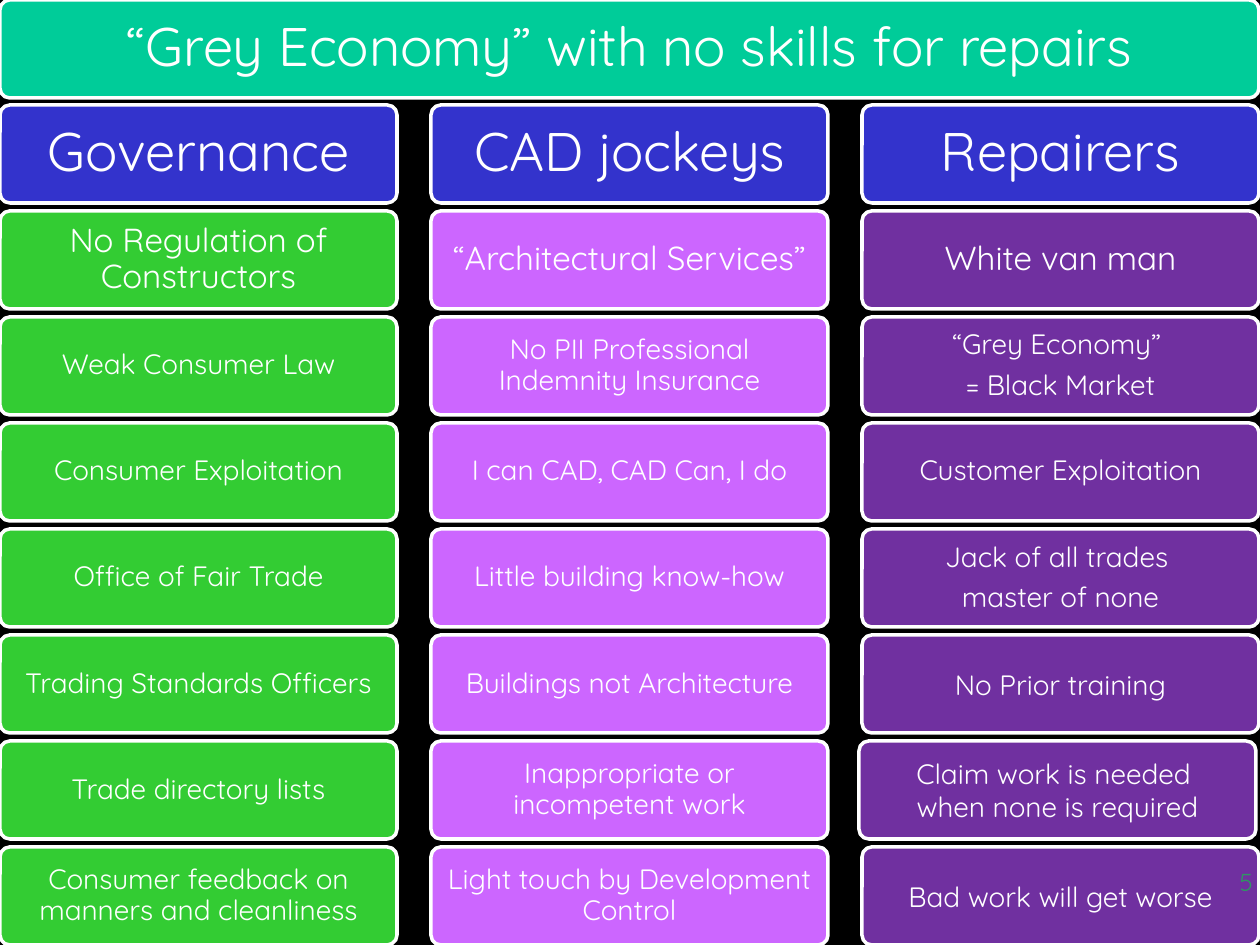
from pptx import Presentation
from pptx.dml.color import RGBColor
from pptx.enum.shapes import MSO_SHAPE
from pptx.enum.text import MSO_ANCHOR, PP_ALIGN
from pptx.util import Emu, Pt

FONT = "Quicksand"
WHITE = "FFFFFF"
PIXELS_PER_INCH = 126
CARD_HEIGHT, CARD_WIDTH, COLUMN_PITCH = 98, 397, 431
LAST_ROW, LAST_ROW_TOP = 8, 847

TITLE = "“Grey Economy” with no skills for repairs"
COLUMNS = [
    ("33CC33", [
        ["Governance"],
        ["No Regulation of Constructors"],
        ["Weak Consumer Law"],
        ["Consumer Exploitation"],
        ["Office of Fair Trade"],
        ["Trading Standards Officers"],
        ["Trade directory lists"],
        ["Consumer feedback on manners and cleanliness"],
    ]),
    ("CC66FF", [
        ["CAD jockeys"],
        ["“Architectural Services”"],
        ["No PII Professional Indemnity Insurance"],
        ["I can CAD, CAD Can, I do"],
        ["Little building know-how"],
        ["Buildings not Architecture"],
        ["Inappropriate or incompetent work"],
        ["Light touch by Development Control"],
    ]),
    ("7030A0", [
        ["Repairers"],
        ["White van man"],
        ["“Grey Economy” ", "= Black Market"],
        ["Customer Exploitation"],
        ["Jack of all trades ", "master of none"],
        ["No Prior training"],
        ["Claim work is needed ", "when none is required"],
        ["Bad work will get worse"],
    ]),
]
PLAIN_SPACING = {"No Prior training", "Claim work is needed ", "Bad work will get worse"}
NUDGES = {"Claim work is needed ": -3}


def px(length):
    """Turn whole pixels into EMU."""
    return Emu(round(length * 914400 / PIXELS_PER_INCH))


def color(value):
    """Turn a hex string into a colour."""
    return RGBColor.from_string(value)


def add_span(para, text, size, ink):
    """Add one run of text to a paragraph."""
    span = para.add_run()
    span.text = text
    span.font.name = FONT
    span.font.size = Pt(size)
    span.font.color.rgb = color(ink)


def set_margins(frame, margin):
    """Give a text frame the same margin on every side."""
    frame.margin_left = frame.margin_right = px(margin)
    frame.margin_top = frame.margin_bottom = px(margin)


def add_card(page, left, row, width, fill, lines, size, margin):
    """Draw a rounded card with centred text in a grid row."""
    top = LAST_ROW_TOP * row // LAST_ROW
    card = page.shapes.add_shape(
        MSO_SHAPE.ROUNDED_RECTANGLE, px(left), px(top), px(width), px(CARD_HEIGHT))
    card.adjustments[0] = 0.1
    card.shadow.inherit = False
    card.fill.solid()
    card.fill.fore_color.rgb = color(fill)
    card.line.color.rgb = color(WHITE)
    card.line.width = Pt(2)
    frame = card.text_frame
    frame.word_wrap = True
    frame.vertical_anchor = MSO_ANCHOR.MIDDLE
    set_margins(frame, margin)
    for index, line in enumerate(lines):
        para = frame.add_paragraph() if index else frame.paragraphs[0]
        para.alignment = PP_ALIGN.CENTER
        if lines[0] not in PLAIN_SPACING:
            para.line_spacing = 0.9
            para.space_after = Pt(round(size * 0.35, 1))
        add_span(para, line, size, WHITE)


def add_column(page, left, fill, entries):
    """Stack a heading, a lead card and the detail cards."""
    for row, lines in enumerate(entries, start=1):
        card_fill = "3333CC" if row == 1 else fill
        size, margin = {1: (31, 16), 2: (19, 10)}.get(row, (16, 9))
        card_left = left + NUDGES.get(lines[0], 0)
        add_card(page, card_left, row, CARD_WIDTH, card_fill, lines, size, margin)


def add_page_number(page, number):
    """Put the page number at the lower right."""
    box = page.shapes.add_textbox(px(1190), px(860), px(70), px(63))
    frame = box.text_frame
    frame.word_wrap = True
    set_margins(frame, 7)
    para = frame.paragraphs[0]
    para.alignment = PP_ALIGN.RIGHT
    add_span(para, number, 14, "309564")


def main():
    """Build the slide and save it."""
    deck = Presentation()
    deck.slide_width, deck.slide_height = px(1260), px(945)
    page = deck.slides.add_slide(deck.slide_layouts[6])
    page.background.fill.solid()
    page.background.fill.fore_color.rgb = color("000000")
    add_card(page, 0, 0, 1259, "00CC99", [TITLE], 31, 16)
    for index, (fill, entries) in enumerate(COLUMNS):
        add_column(page, index * COLUMN_PITCH, fill, entries)
    add_page_number(page, "5")
    deck.save("out.pptx")


if __name__ == "__main__":
    main()
